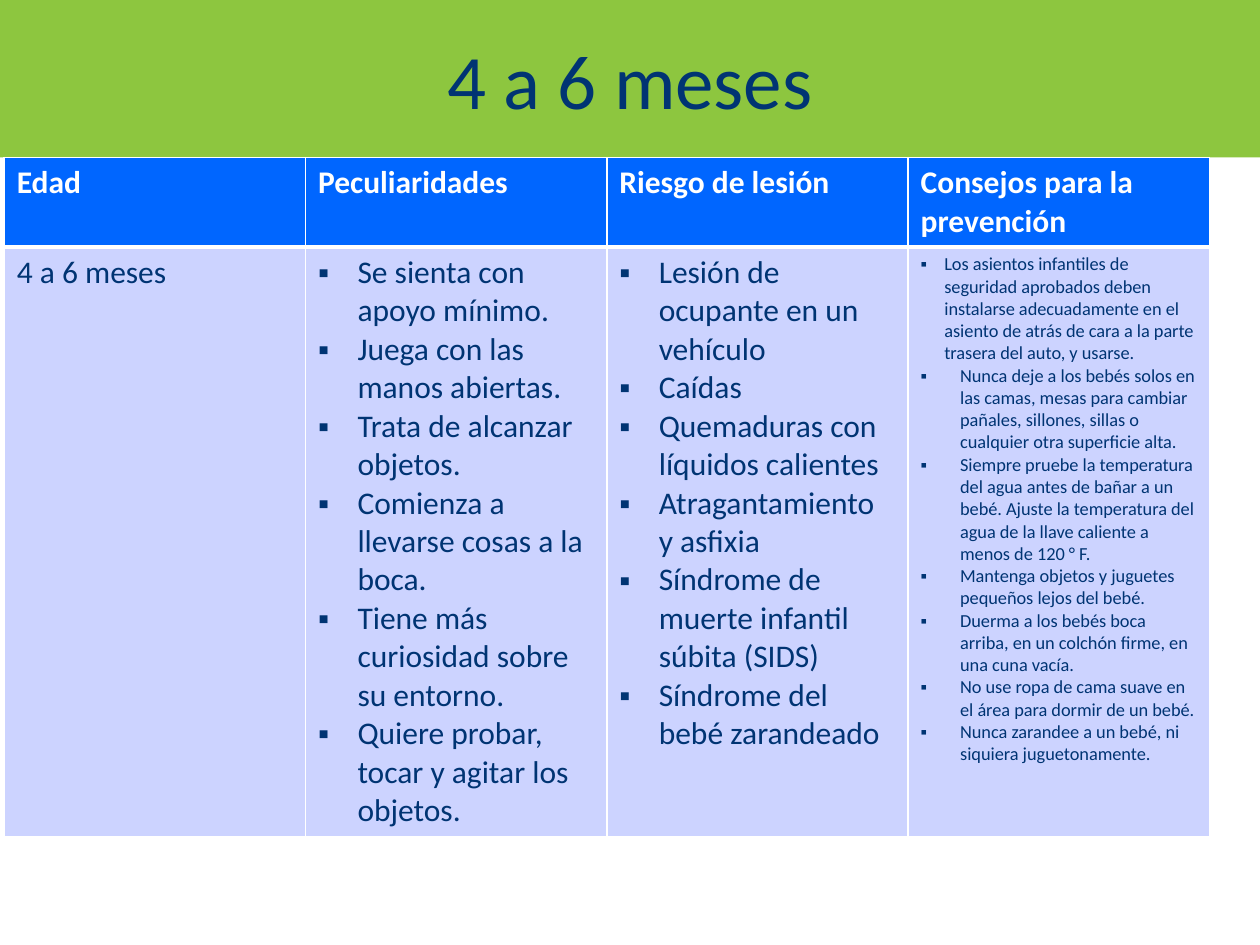
from lxml.etree import SubElement
from pptx import Presentation
from pptx.dml.color import RGBColor
from pptx.enum.shapes import MSO_SHAPE as Shape
from pptx.enum.text import MSO_ANCHOR as Anchor, PP_ALIGN as Align
from pptx.oxml.ns import qn
from pptx.util import Pt

COLORS = {"green": "8DC63F", "navy": "003473", "blue": "0066FF",
          "lavender": "CCD3FF", "white": "FFFFFF"}
TITLE = "4 a 6 meses"
HEADERS = ["Edad", "Peculiaridades", "Riesgo de lesión", "Consejos para la prevención"]
AGE = "4 a 6 meses"
TRAITS = [
    "Se sienta con apoyo mínimo.",
    "Juega con las manos abiertas.",
    "Trata de alcanzar objetos.",
    "Comienza a llevarse cosas a la boca.",
    "Tiene más curiosidad sobre su entorno.",
    "Quiere probar, tocar y agitar los objetos.",
]
RISKS = [
    "Lesión de ocupante en un vehículo",
    "Caídas",
    "Quemaduras con líquidos calientes",
    "Atragantamiento y asfixia",
    "Síndrome de muerte infantil súbita (SIDS)",
    "Síndrome del bebé zarandeado",
]
TIPS = [
    "Los asientos infantiles de seguridad aprobados deben instalarse adecuadamente "
    "en el asiento de atrás de cara a la parte trasera del auto, y usarse.",
    "Nunca deje a los bebés solos en las camas, mesas para cambiar pañales, sillones, "
    "sillas o cualquier otra superficie alta.",
    "Siempre pruebe la temperatura del agua antes de bañar a un bebé. Ajuste la "
    "temperatura del agua de la llave caliente a menos de 120 ° F.",
    "Mantenga objetos y juguetes pequeños lejos del bebé.",
    "Duerma a los bebés boca arriba, en un colchón firme, en una cuna vacía.",
    "No use ropa de cama suave en el área para dormir de un bebé.",
    "Nunca zarandee a un bebé, ni siquiera juguetonamente.",
]

SLIDE_WIDTH, SLIDE_HEIGHT = 720, 540
TITLE_HEIGHT = 90
TABLE_LEFT, COLUMN_WIDTH = 2.4, 172.2
ROW_HEIGHTS = [51.2, 336.5]
INDENT, TIGHT_INDENT = 22.5, 13.5

HEADER_FONT = {"name": "Calibri", "size": Pt(18), "bold": True, "color": "white"}
BODY_FONT = {**HEADER_FONT, "bold": False, "color": "navy"}
TIP_FONT = {**BODY_FONT, "size": Pt(10.5)}
TITLE_FONT = {**BODY_FONT, "size": Pt(44)}


def rgb(name):
    return RGBColor.from_string(COLORS[name])


def fill_solid(target, color):
    target.fill.solid()
    target.fill.fore_color.rgb = rgb(color)


def write(paragraph, text, font):
    run = paragraph.add_run()
    run.text = text
    for name, value in font.items():
        if name == "color":
            run.font.color.rgb = rgb(value)
        else:
            setattr(run.font, name, value)


def add_bullet(paragraph, indent):
    properties = paragraph._p.get_or_add_pPr()
    properties.set("marL", str(Pt(indent)))
    properties.set("indent", str(-Pt(indent)))
    SubElement(properties, qn("a:buFont"), typeface="Arial")
    SubElement(properties, qn("a:buChar"), char="▪")


def style_cell(cell, color, borders):
    """Draw white borders, given as side to width, then fill the cell."""
    properties = cell._tc.get_or_add_tcPr()
    for side, width in borders.items():
        line = SubElement(properties, qn(f"a:ln{side}"), w=str(Pt(width)))
        solid = SubElement(line, qn("a:solidFill"))
        SubElement(solid, qn("a:srgbClr"), val=COLORS["white"])
    fill_solid(cell, color)


def write_list(cell, items, font, indents):
    frame = cell.text_frame
    for index, (item, indent) in enumerate(zip(items, indents)):
        paragraph = frame.add_paragraph() if index else frame.paragraphs[0]
        add_bullet(paragraph, indent)
        write(paragraph, item, font)


def add_title(slide):
    banner = slide.shapes.add_shape(Shape.RECTANGLE, 0, 0, Pt(SLIDE_WIDTH), Pt(TITLE_HEIGHT))
    banner.shadow.inherit = False
    banner.line.fill.background()
    fill_solid(banner, "green")
    banner.text_frame.word_wrap = True
    banner.text_frame.vertical_anchor = Anchor.MIDDLE
    paragraph = banner.text_frame.paragraphs[0]
    paragraph.alignment = Align.CENTER
    write(paragraph, TITLE, TITLE_FONT)


def add_age_table(slide):
    count = len(HEADERS)
    table = slide.shapes.add_table(
        len(ROW_HEIGHTS), count, Pt(TABLE_LEFT), Pt(TITLE_HEIGHT),
        Pt(COLUMN_WIDTH * count), Pt(sum(ROW_HEIGHTS))).table
    for column in table.columns:
        column.width = Pt(COLUMN_WIDTH)
    for row, height in zip(table.rows, ROW_HEIGHTS):
        row.height = Pt(height)

    for index, header in enumerate(HEADERS):
        top, body = table.cell(0, index), table.cell(1, index)
        style_cell(top, "blue", {"L": 1, "R": 1, "T": 1, "B": 3})
        style_cell(body, "lavender", {"L": 1, "R": 1, "T": 3, "B": 1})
        write(top.text_frame.paragraphs[0], header, HEADER_FONT)

    write(table.cell(1, 0).text_frame.paragraphs[0], AGE, BODY_FONT)
    write_list(table.cell(1, 1), TRAITS, BODY_FONT, [INDENT] * len(TRAITS))
    write_list(table.cell(1, 2), RISKS, BODY_FONT, [INDENT] * len(RISKS))
    write_list(table.cell(1, 3), TIPS, TIP_FONT,
               [TIGHT_INDENT] + [INDENT] * (len(TIPS) - 1))


def main():
    presentation = Presentation()
    presentation.slide_width, presentation.slide_height = Pt(SLIDE_WIDTH), Pt(SLIDE_HEIGHT)
    slide = presentation.slides.add_slide(presentation.slide_layouts[6])
    add_title(slide)
    add_age_table(slide)
    presentation.save("out.pptx")


if __name__ == "__main__":
    main()
